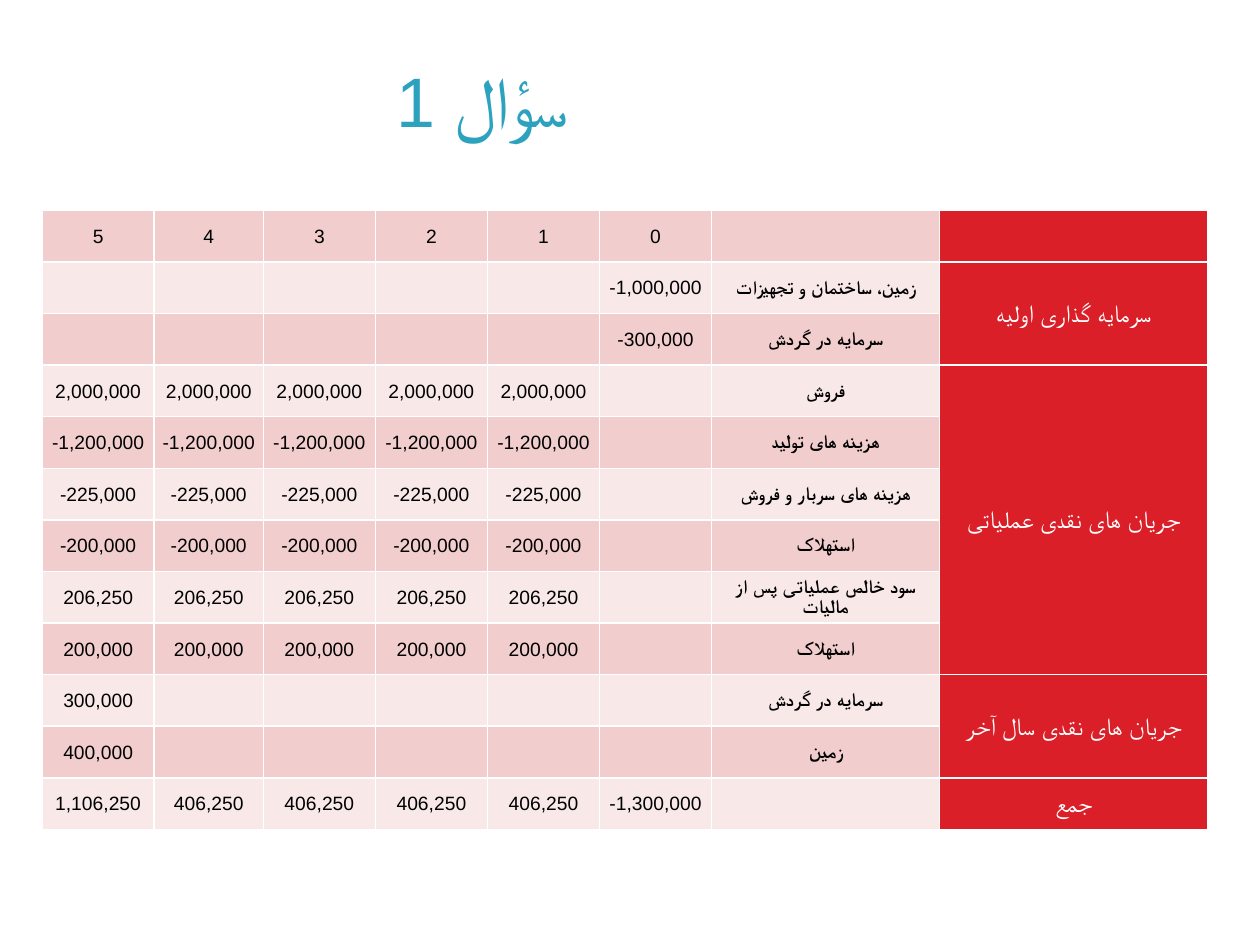
from dataclasses import dataclass

from lxml import etree
from pptx import Presentation
from pptx.dml.color import RGBColor
from pptx.enum.text import MSO_ANCHOR, PP_ALIGN
from pptx.oxml.ns import qn
from pptx.util import Cm, Pt

CENTER = PP_ALIGN.CENTER
MIDDLE = MSO_ANCHOR.MIDDLE


@dataclass(frozen=True)
class Theme:
    font: str = "Arial"
    title: str = "2DA2BF"
    text: str = "000000"
    white: str = "FFFFFF"
    section: str = "DA1F28"
    bands: tuple[str, str] = ("F1CDCD", "F8E8E8")
    title_size: float = 40
    section_size: float = 14
    body_size: float = 11


@dataclass(frozen=True)
class Line:
    """One cash flow line; values are keyed by year."""
    label: str
    values: dict[int, int]


@dataclass(frozen=True)
class Section:
    """A heading that spans its lines."""
    name: str
    lines: tuple[Line, ...]


THEME = Theme()
YEARS = range(6)
COLUMN_CM = (2.26, 2.2, 2.26, 2.26, 2.26, 2.26, 4.6, 5.4)
ROW_CM = 1.04
LABEL_COL, SECTION_COL = 6, 7


def yearly(amount: int) -> dict[int, int]:
    """The same amount in each operating year."""
    return {year: amount for year in YEARS if year > 0}


SECTIONS = (
    Section("", (Line("", {year: year for year in YEARS}),)),
    Section("سرمایه گذاری اولیه", (
        Line("زمین، ساختمان و تجهیزات", {0: -1_000_000}),
        Line("سرمایه در گردش", {0: -300_000}),
    )),
    Section("جریان های نقدی عملیاتی", (
        Line("فروش", yearly(2_000_000)),
        Line("هزینه های تولید", yearly(-1_200_000)),
        Line("هزینه های سربار و فروش", yearly(-225_000)),
        Line("استهلاک", yearly(-200_000)),
        Line("سود خالص عملیاتی پس از مالیات", yearly(206_250)),
        Line("استهلاک", yearly(200_000)),
    )),
    Section("جریان های نقدی سال آخر", (
        Line("سرمایه در گردش", {5: 300_000}),
        Line("زمین", {5: 400_000}),
    )),
    Section("جمع", (
        Line("", {**yearly(406_250), 0: -1_300_000, 5: 1_106_250}),
    )),
)


def write(tf, text: str, *, size: float = THEME.body_size,
          color: str = THEME.text, bold: bool = False, rtl: bool = False,
          spacing: float | None = None) -> None:
    p = tf.paragraphs[0]
    p.alignment = CENTER
    p.line_spacing = spacing
    if rtl:
        p._p.get_or_add_pPr().set("rtl", "1")
    r = p.add_run()
    r.text = text
    r.font.size = Pt(size)
    r.font.bold = bold
    r.font.name = THEME.font
    r.font.color.rgb = RGBColor.from_string(color)
    cs = etree.SubElement(r._r.get_or_add_rPr(), qn("a:cs"))
    cs.set("typeface", THEME.font)


def style_cell(cell, fill: str) -> None:
    cell.margin_left = cell.margin_right = cell.margin_top = Cm(0.02)
    cell.margin_bottom = 0
    cell.vertical_anchor = MIDDLE
    # Borders come before the fill in the cell properties
    for side in ("lnL", "lnR", "lnT", "lnB"):
        ln = etree.SubElement(cell._tc.get_or_add_tcPr(), qn(f"a:{side}"))
        ln.set("w", str(Pt(1)))
        solid = etree.SubElement(ln, qn("a:solidFill"))
        etree.SubElement(solid, qn("a:srgbClr")).set("val", THEME.white)
    cell.fill.solid()
    cell.fill.fore_color.rgb = RGBColor.from_string(fill)


def draw_title(s) -> None:
    tf = s.shapes.add_textbox(Cm(0), Cm(1.27), Cm(19.05), Cm(1.47)).text_frame
    tf.word_wrap = True
    tf.vertical_anchor = MIDDLE
    write(tf, "سؤال 1 ", size=THEME.title_size, color=THEME.title, rtl=True)


def draw_line(table, row: int, line: Line) -> None:
    for year, value in line.values.items():
        # Years run from right to left
        cell = table.cell(row, YEARS[-1] - year)
        write(cell.text_frame, f"{value:,}")
    if line.label:
        write(table.cell(row, LABEL_COL).text_frame, line.label,
              bold=True, rtl=True, spacing=0.9)


def draw_table(s) -> None:
    count = sum(len(section.lines) for section in SECTIONS)
    table = s.shapes.add_table(
        count, len(COLUMN_CM), Cm(0.85), Cm(4.24),
        Cm(sum(COLUMN_CM)), Cm(ROW_CM * count)).table
    table.first_row = table.horz_banding = False
    for column, width in zip(table.columns, COLUMN_CM):
        column.width = Cm(width)

    # Banded body and solid section column
    for i, row in enumerate(table.rows):
        row.height = Cm(ROW_CM)
        for j, cell in enumerate(row.cells):
            style_cell(cell, THEME.section if j == SECTION_COL
                       else THEME.bands[i % 2])

    # Sections and their lines
    top = 0
    for section in SECTIONS:
        bottom = top + len(section.lines) - 1
        head = table.cell(top, SECTION_COL)
        if bottom > top:
            head.merge(table.cell(bottom, SECTION_COL))
        if section.name:
            write(head.text_frame, section.name, size=THEME.section_size,
                  color=THEME.white, rtl=True)
        for row, line in enumerate(section.lines, top):
            draw_line(table, row, line)
        top = bottom + 1


def main() -> None:
    prs = Presentation()
    prs.slide_width, prs.slide_height = Cm(25.4), Cm(19.05)
    s = prs.slides.add_slide(prs.slide_layouts[6])
    draw_title(s)
    draw_table(s)
    prs.save("out.pptx")


if __name__ == "__main__":
    main()
